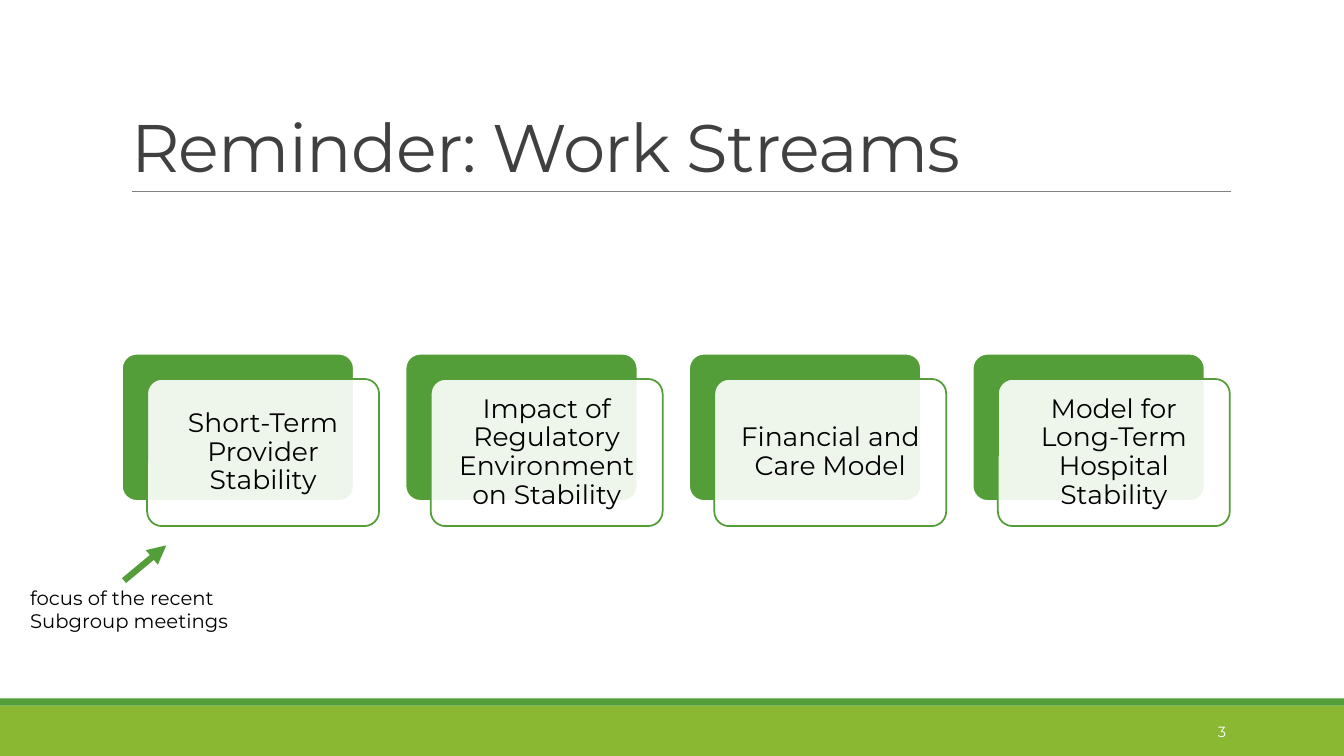
from dataclasses import dataclass

from lxml.etree import SubElement
from pptx import Presentation
from pptx.dml.color import RGBColor
from pptx.enum.shapes import MSO_CONNECTOR, MSO_SHAPE
from pptx.enum.text import MSO_ANCHOR, MSO_AUTO_SIZE, PP_ALIGN
from pptx.oxml.ns import qn
from pptx.util import Inches, Pt


@dataclass(frozen=True)
class Theme:
    font: str = "Montserrat"
    green: str = "549E39"
    lime: str = "8AB833"
    rule: str = "808080"
    head: str = "404040"
    ink: str = "000000"
    paper: str = "FFFFFF"
    title: float = 48
    card: float = 19
    note: float = 14
    page: float = 10.5


T = Theme()
WIDE, HIGH = 13.33, 7.5
CARDS = [
    "Short-Term Provider Stability",
    "Impact of Regulatory Environment on Stability",
    "Financial and Care Model",
    "Model for Long-Term Hospital Stability",
]


def color(code):
    return RGBColor.from_string(code)


def write(frame, text, size, ink, align=PP_ALIGN.LEFT, anchor=MSO_ANCHOR.TOP, space=1.0):
    frame.word_wrap = True
    frame.auto_size = MSO_AUTO_SIZE.NONE
    frame.vertical_anchor = anchor
    para = frame.paragraphs[0]
    para.alignment = align
    para.line_spacing = space
    run = para.add_run()
    run.text = text
    run.font.name = T.font
    run.font.size = Pt(size)
    run.font.color.rgb = color(ink)
    return run


def block(slide, kind, box, fill, edge=None):
    shape = slide.shapes.add_shape(kind, *map(Inches, box))
    shape.shadow.inherit = False
    shape.fill.solid()
    shape.fill.fore_color.rgb = color(fill)
    if edge:
        shape.line.color.rgb = color(edge)
        shape.line.width = Pt(1.25)
    else:
        shape.line.fill.background()
    return shape


def stroke(slide, start, end, ink, width):
    line = slide.shapes.add_connector(MSO_CONNECTOR.STRAIGHT, *map(Inches, start + end))
    line.line.color.rgb = color(ink)
    line.line.width = Pt(width)
    SubElement(line._element.spPr, qn("a:effectLst"))
    return line


def label(slide, box, *text, **style):
    return write(slide.shapes.add_textbox(*map(Inches, box)).text_frame, *text, **style)


def footer(slide, box):
    left, top, width, height = box
    strip = 0.07
    # Lime band under a thin green strip
    block(slide, MSO_SHAPE.RECTANGLE, box, T.lime)
    block(slide, MSO_SHAPE.RECTANGLE, (left, top - strip, width, strip), T.green)
    # Page number
    label(slide, (left + 10.83, top + 0.06, 1.43, 0.4), "3", T.page, T.paper,
          align=PP_ALIGN.RIGHT, anchor=MSO_ANCHOR.MIDDLE)


def header(slide, box):
    left, top, width, height = box
    title = slide.shapes.title
    title.left, title.top, title.width, title.height = map(Inches, box)
    run = write(title.text_frame, "Reminder: Work Streams", T.title, T.head,
                anchor=MSO_ANCHOR.BOTTOM, space=0.85)
    run.font._element.set("spc", "-50")
    # Rule below the title
    base = top + height
    stroke(slide, (left + 0.11, base), (left + width + 0.01, base), T.rule, 0.5)


def card(slide, box, text):
    left, top, width, height = box
    shift = 0.25
    back = block(slide, MSO_SHAPE.ROUNDED_RECTANGLE, box, T.green, T.paper)
    front = block(slide, MSO_SHAPE.ROUNDED_RECTANGLE,
                  (left + shift, top + shift, width, height), T.paper, T.green)
    for shape in (back, front):
        shape.adjustments[0] = 0.1
    # Front sheet lets the green show through
    tint = front.fill._xPr.find(qn("a:solidFill"))[0]
    SubElement(tint, qn("a:alpha")).set("val", "90000")
    frame = front.text_frame
    frame.margin_left = frame.margin_right = Inches(0.08)
    frame.margin_top = frame.margin_bottom = Inches(0.08)
    write(frame, text, T.card, T.ink, PP_ALIGN.CENTER, MSO_ANCHOR.MIDDLE, 0.9)


def streams(slide, box):
    left, top, width, height = box
    step = width / len(CARDS)
    for i, text in enumerate(CARDS):
        card(slide, (left + i * step, top, 2.3, height), text)


def callout(slide, box):
    left, top, width, height = box
    label(slide, box, "focus of the recent Subgroup meetings", T.note, T.ink)
    # Arrow up to the first card
    arrow = stroke(slide, (left + 1.03, top), (left + 1.45, top - 0.35), T.green, 4.5)
    SubElement(arrow.line._get_or_add_ln(), qn("a:tailEnd")).set("type", "triangle")


def main():
    deck = Presentation()
    deck.slide_width, deck.slide_height = Inches(WIDE), Inches(HIGH)
    slide = deck.slides.add_slide(deck.slide_layouts[5])
    footer(slide, (0, HIGH - 0.5, WIDE, 0.5))
    header(slide, (1.2, 0.31, 11, 1.59))
    streams(slide, (1.21, 3.51, 11.25, 1.46))
    callout(slide, (0.2, 5.76, 2.59, 0.57))
    deck.save("out.pptx")


if __name__ == "__main__":
    main()
